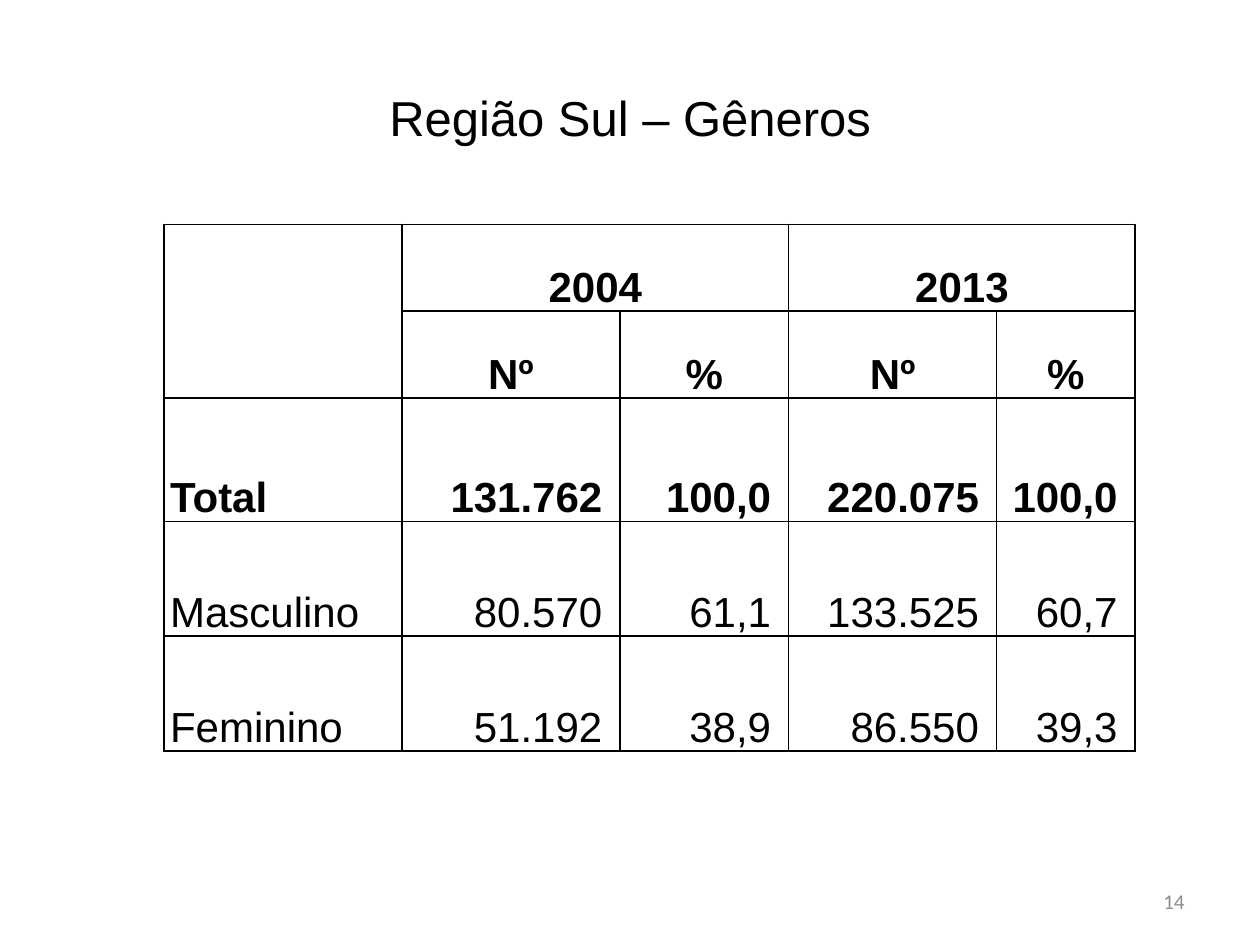
from pptx import Presentation
from pptx.dml.color import RGBColor
from pptx.enum.text import MSO_ANCHOR, PP_ALIGN
from pptx.oxml.ns import qn
from pptx.util import Inches, Pt
from lxml.etree import SubElement

COLUMN_WIDTHS = [1.89, 1.73, 1.34, 1.65, 1.1]
ROW_HEIGHTS = [0.69, 0.69, 0.98, 0.91, 0.91]
HEADER_ROWS = 2
BOLD_ROWS = 3
ROWS = [
    ["", "2004", "", "2013", ""],
    ["", "Nº", "%", "Nº", "%"],
    ["Total", "131.762", "100,0", "220.075", "100,0"],
    ["Masculino", "80.570", "61,1", "133.525", "60,7"],
    ["Feminino", "51.192", "38,9", "86.550", "39,3"],
]
MERGES = [((0, 0), (1, 0)), ((0, 1), (0, 2)), ((0, 3), (0, 4))]


def color(hex_text):
    return RGBColor.from_string(hex_text)


def write(text_frame, text, size, align, font="Arial", ink="000000", bold=False):
    text_frame.text = text
    para = text_frame.paragraphs[0]
    para.alignment = align
    for span in para.runs:
        span.font.name = font
        span.font.size = Pt(size)
        span.font.bold = bold
        span.font.color.rgb = color(ink)
    return para


def add_borders(cell, hex_text, width):
    properties = cell._tc.get_or_add_tcPr()
    for side in ("a:lnL", "a:lnR", "a:lnT", "a:lnB"):
        line = SubElement(properties, qn(side), w=str(Pt(width)))
        fill = SubElement(line, qn("a:solidFill"))
        SubElement(fill, qn("a:srgbClr"), val=hex_text)


def place_title(page, left, top, width, height):
    title = page.shapes.title
    title.left, title.top = Inches(left), Inches(top)
    title.width, title.height = Inches(width), Inches(height)
    title.text_frame.vertical_anchor = MSO_ANCHOR.MIDDLE
    write(title.text_frame, "Região Sul – Gêneros", 28, PP_ALIGN.CENTER)


def fill_cell(cell, text, row, column):
    is_number = row >= HEADER_ROWS and column > 0
    if row < HEADER_ROWS:
        align = PP_ALIGN.CENTER
    else:
        align = PP_ALIGN.RIGHT if is_number else PP_ALIGN.LEFT
    add_borders(cell, "000000", 1)
    cell.fill.solid()
    cell.fill.fore_color.rgb = color("FFFFFF")
    cell.vertical_anchor = MSO_ANCHOR.BOTTOM
    cell.margin_left = Inches(0.05)
    cell.margin_right = Inches(0.14 if is_number else 0.05)
    cell.margin_top = cell.margin_bottom = 0
    para = write(cell.text_frame, text, 24, align, bold=row < BOLD_ROWS)
    para.line_spacing = 1.07


def place_table(page, left, top, width, height):
    frame = page.shapes.add_table(
        len(ROWS), len(COLUMN_WIDTHS),
        Inches(left), Inches(top), Inches(width), Inches(height))
    table = frame.table
    table.first_row = table.horz_banding = False
    for column, column_width in zip(table.columns, COLUMN_WIDTHS):
        column.width = Inches(column_width)
    for row, row_height in zip(table.rows, ROW_HEIGHTS):
        row.height = Inches(row_height)
    for row, texts in enumerate(ROWS):
        for column, text in enumerate(texts):
            fill_cell(table.cell(row, column), text, row, column)
    for first, last in MERGES:
        table.cell(*first).merge(table.cell(*last))


def place_page_number(page, left, top, width, height):
    box = page.shapes.add_textbox(
        Inches(left), Inches(top), Inches(width), Inches(height))
    box.text_frame.word_wrap = True
    box.text_frame.vertical_anchor = MSO_ANCHOR.MIDDLE
    write(box.text_frame, "14", 12, PP_ALIGN.RIGHT, "Calibri", "8C8C8C")


def main():
    deck = Presentation()
    deck.slide_width, deck.slide_height = Inches(10), Inches(7.5)
    page = deck.slides.add_slide(deck.slide_layouts[5])
    place_title(page, 0.5, 0.3, 9, 1.25)
    place_table(page, 1.3, 1.78, sum(COLUMN_WIDTHS), sum(ROW_HEIGHTS))
    place_page_number(page, 7.17, 6.95, 2.33, 0.4)
    deck.save("out.pptx")


if __name__ == "__main__":
    main()
